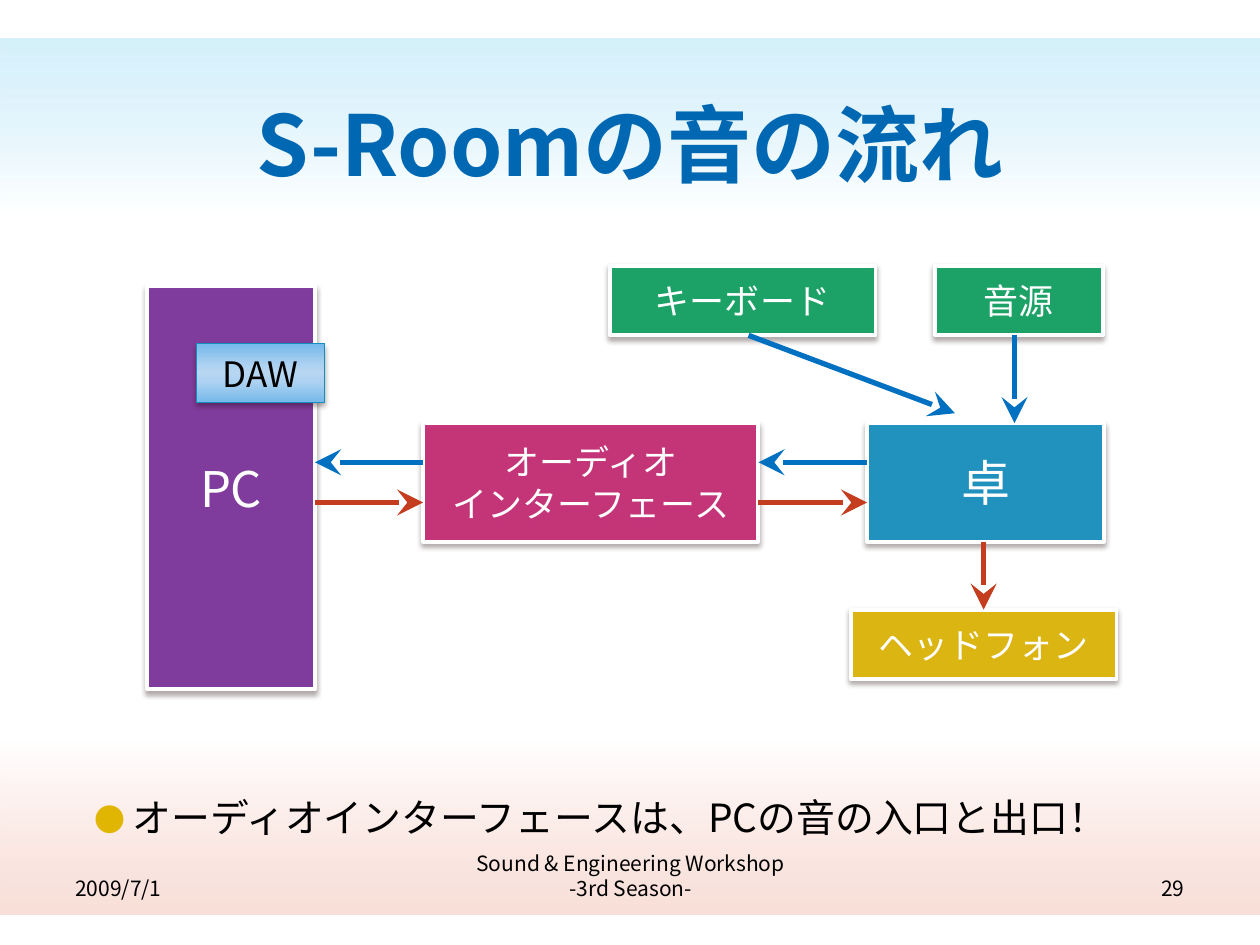
from lxml.etree import SubElement
from pptx import Presentation
from pptx.dml.color import RGBColor
from pptx.enum.shapes import MSO_CONNECTOR as Connector, MSO_SHAPE as Shape
from pptx.enum.text import MSO_ANCHOR as Anchor, PP_ALIGN as Align
from pptx.oxml.ns import qn
from pptx.util import Cm, Pt

FONT = "Noto Sans CJK JP"
COLORS = {
    "title": "0068B3", "black": "000000", "white": "FFFFFF", "shadow": "1A0000",
    "purple": "7B309B", "pink": "C62873", "teal": "118FBF", "green": "0CA15F",
    "gold": "E0B602", "input": "0070C0", "output": "C43D1F",
    "sky": "C8ECFA", "blush": "F7D6CE",
    "daw_edge": "74B8EA", "daw_mid": "AED2F1", "daw_core": "B6D6F2",
}
PAGE_GRADIENT = [(0, "sky", 50), (20, "white", 96), (50, "white", 100),
                 (80, "white", 96), (100, "blush", 50)]
DAW_GRADIENT = [(0, "daw_edge", 100), (37, "daw_mid", 100), (50, "daw_core", 100),
                (64, "daw_mid", 100), (100, "daw_edge", 100)]

TEXTS = [
    ("S-Roomの音の流れ", (1.27, 0.84, 22.86, 3.18), Align.CENTER, Anchor.BOTTOM,
     {"size": Pt(48), "bold": True}, "title"),
    ("2009/7/1", (1.27, 17.27, 5.92, 1.02), Align.LEFT, Anchor.BOTTOM,
     {"size": Pt(12)}, "black"),
    ("Sound & Engineering Workshop\v-3rd Season-", (8.69, 17.27, 8.05, 1.02),
     Align.CENTER, Anchor.BOTTOM, {"size": Pt(12)}, "black"),
    ("29", (18.21, 17.27, 5.92, 1.02), Align.RIGHT, Anchor.BOTTOM,
     {"size": Pt(12)}, "black"),
]
MESSAGE = ("オーディオインターフェースは、PCの音の入口と出口！", (1.27, 15.88, 22.86, 1.14),
           Align.LEFT, Anchor.TOP, {"size": Pt(22.2)}, "black")

DEVICES = {
    "pc": ("PC", (2.97, 5.77, 3.38, 8.13), "purple", 28),
    "interface": ("オーディオ\vインターフェース", (8.53, 8.53, 6.76, 2.39), "pink", 20),
    "desk": ("卓", (17.48, 8.53, 4.78, 2.39), "teal", 28),
    "source": ("音源", (18.85, 5.36, 3.38, 1.4), "green", 20),
    "keyboard": ("キーボード", (12.29, 5.36, 5.36, 1.4), "green", 20),
    "headphones": ("ヘッドフォン", (17.15, 12.29, 5.36, 1.4), "gold", 20),
}
DAW = ("DAW", (3.96, 6.93, 2.59, 1.19))
INPUT_Y, OUTPUT_Y = 9.32, 10.13
SOURCE_X, DESK_X = 20.45, 19.83


def color(name):
    return RGBColor.from_string(COLORS[name])


def edges(name):
    left, top, width, height = DEVICES[name][1]
    return left, top, left + width, top + height


def write(box, text, align, anchor, formats, tint):
    frame = box.text_frame
    frame.word_wrap = True
    frame.vertical_anchor = anchor
    para = frame.paragraphs[0]
    para.text = text
    para.alignment = align
    for span in para.runs:
        for key, value in {"name": FONT, **formats}.items():
            setattr(span.font, key, value)
        span.font.color.rgb = color(tint)
        SubElement(span.font._element, qn("a:ea"), typeface=FONT)
    return para


def add_text(page, text, place, *style):
    box = page.shapes.add_textbox(*map(Cm, place))
    return box, write(box, text, *style)


def add_panel(page, place):
    panel = page.shapes.add_shape(Shape.RECTANGLE, *map(Cm, place))
    panel.shadow.inherit = False
    panel.line.fill.background()
    return panel


def set_gradient(panel, stops):
    panel.fill.gradient()
    panel.fill.gradient_angle = 270
    stop_list = panel._element.spPr.find(".//" + qn("a:gsLst"))
    for old in list(stop_list):
        stop_list.remove(old)
    for position, tint, opacity in stops:
        stop = SubElement(stop_list, qn("a:gs"), pos=str(position * 1000))
        value = SubElement(stop, qn("a:srgbClr"), val=COLORS[tint])
        SubElement(value, qn("a:alpha"), val=str(opacity * 1000))


def set_edge(panel, tint, width):
    panel.line.color.rgb = color(tint)
    panel.line.width = Pt(width)
    effects = panel._element.spPr.find(qn("a:effectLst"))
    shadow = SubElement(effects, qn("a:outerShdw"), blurRad=str(Pt(3.1)),
                        dist=str(Pt(2)), dir="5400000", rotWithShape="0")
    value = SubElement(shadow, qn("a:srgbClr"), val=COLORS["shadow"])
    SubElement(value, qn("a:alpha"), val="35000")


def add_device(page, text, place, tint, size):
    panel = add_panel(page, place)
    panel.fill.solid()
    panel.fill.fore_color.rgb = color(tint)
    value = panel._element.spPr.find(qn("a:solidFill"))[0]
    SubElement(value, qn("a:alpha"), val="90000")
    set_edge(panel, "white", 2.21)
    write(panel, text, Align.CENTER, Anchor.MIDDLE, {"size": Pt(size)}, "white")


def add_arrow(page, tint, *ends):
    arrow = page.shapes.add_connector(Connector.STRAIGHT, *map(Cm, ends))
    arrow.line.color.rgb = color(tint)
    arrow.line.width = Pt(3)
    SubElement(arrow.line._ln, qn("a:tailEnd"), type="stealth", w="lg", len="lg")
    SubElement(arrow._element.spPr, qn("a:effectLst"))


def add_message(page):
    box, para = add_text(page, *MESSAGE)
    for side in ("left", "top", "right", "bottom"):
        setattr(box.text_frame, f"margin_{side}", Cm(0.13))
    para.space_after = Pt(12)
    props = para._p.get_or_add_pPr()
    props.set("marL", str(Cm(1.27)))
    props.set("indent", str(Cm(-0.76)))
    tint = SubElement(props, qn("a:buClr"))
    SubElement(tint, qn("a:srgbClr"), val=COLORS["gold"])
    SubElement(props, qn("a:buSzPct"), val="80000")
    SubElement(props, qn("a:buFont"), typeface=FONT)
    SubElement(props, qn("a:buChar"), char="●")


def add_flow(page):
    desk_left, desk_top, _, desk_bottom = edges("desk")
    face_left, _, face_right, _ = edges("interface")
    pc_right = edges("pc")[2]
    source_bottom = edges("source")[3]
    phones_top = edges("headphones")[1]
    add_arrow(page, "input", SOURCE_X, source_bottom, SOURCE_X, desk_top)
    add_arrow(page, "input", 15.09, source_bottom, 19.25, 8.33)
    for left, right in ((face_right, desk_left), (pc_right, face_left)):
        add_arrow(page, "input", right, INPUT_Y, left, INPUT_Y)
        add_arrow(page, "output", left, OUTPUT_Y, right, OUTPUT_Y)
    add_arrow(page, "output", DESK_X, desk_bottom, DESK_X, phones_top)


def main():
    deck = Presentation()
    deck.slide_width, deck.slide_height = Cm(25.4), Cm(19.05)
    page = deck.slides.add_slide(deck.slide_layouts[6])
    for _ in range(2):
        set_gradient(add_panel(page, (0, 0.79, 25.4, 17.65)), PAGE_GRADIENT)
    for text in TEXTS:
        add_text(page, *text)
    add_message(page)
    for device in DEVICES.values():
        add_device(page, *device)
    add_flow(page)
    label, place = DAW
    panel = add_panel(page, place)
    set_gradient(panel, DAW_GRADIENT)
    set_edge(panel, "teal", 0.39)
    write(panel, label, Align.CENTER, Anchor.MIDDLE, {"size": Pt(20)}, "black")
    deck.save("out.pptx")


if __name__ == "__main__":
    main()
